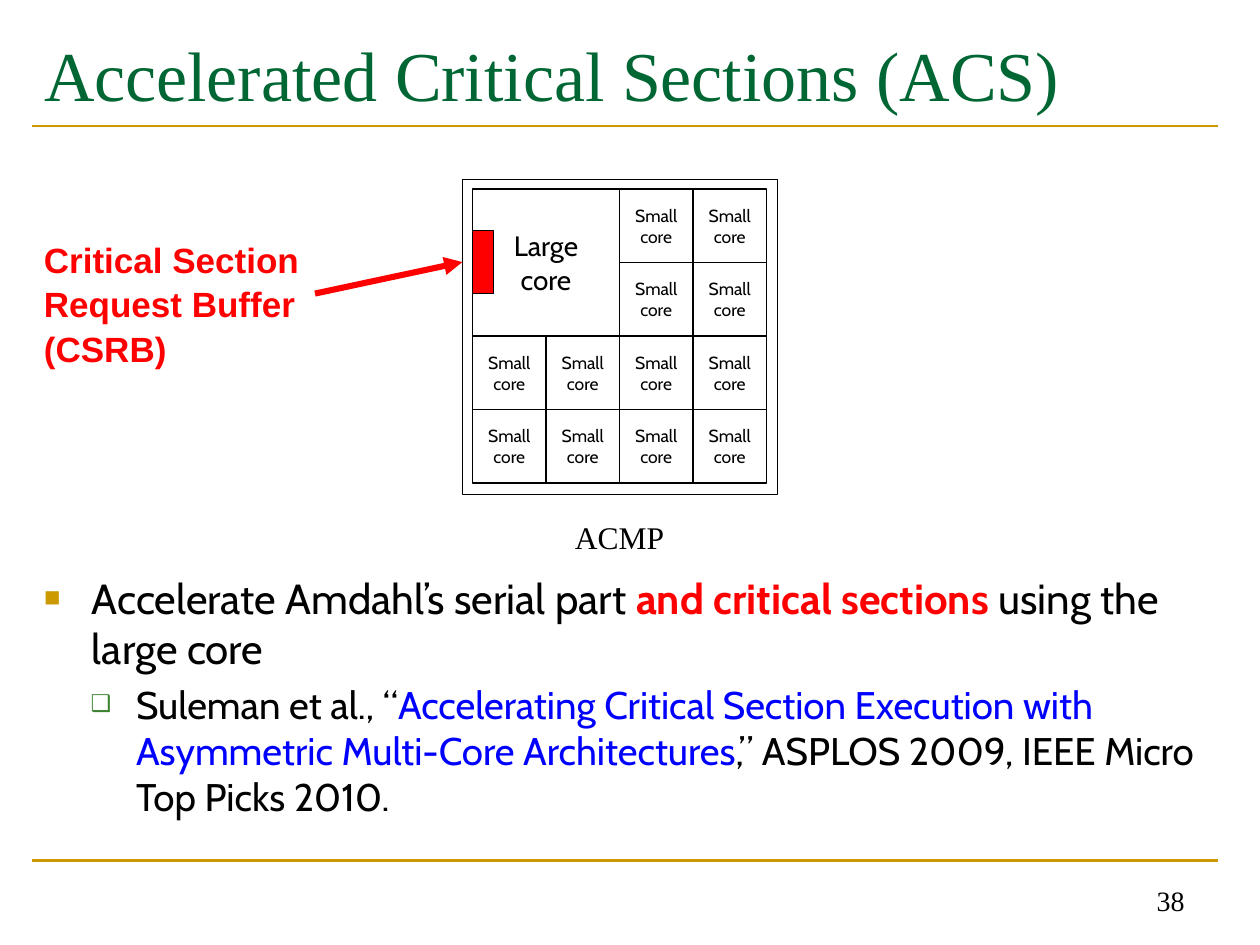
from dataclasses import dataclass
from itertools import product

from lxml import etree
from pptx import Presentation
from pptx.dml.color import RGBColor
from pptx.enum.shapes import MSO_CONNECTOR, MSO_SHAPE
from pptx.enum.text import MSO_ANCHOR, MSO_AUTO_SIZE, PP_ALIGN
from pptx.oxml.ns import qn
from pptx.util import Inches, Pt

LEFT, CENTER, RIGHT = PP_ALIGN.LEFT, PP_ALIGN.CENTER, PP_ALIGN.RIGHT
TOP, MIDDLE, BOTTOM = MSO_ANCHOR.TOP, MSO_ANCHOR.MIDDLE, MSO_ANCHOR.BOTTOM
NO_FIT = MSO_AUTO_SIZE.NONE
RECTANGLE = MSO_SHAPE.RECTANGLE
STRAIGHT = MSO_CONNECTOR.STRAIGHT


@dataclass(frozen=True)
class Theme:
    black: str = "000000"
    white: str = "FFFFFF"
    red: str = "FF0000"
    blue: str = "0000FF"
    green: str = "006633"
    leaf: str = "3B812F"
    gold: str = "CC9900"
    serif: str = "Times New Roman"
    sans: str = "Arial"
    body: str = "Cabin"
    title_size: int = 40
    point_size: int = 24
    citation_size: int = 22
    label_size: int = 20
    caption_size: int = 18
    large_size: int = 16
    small_size: int = 10


theme = Theme()


def write(frame, text, font=theme.body, size=theme.point_size, color=theme.black,
          bold=False, align=LEFT, anchor=TOP, wrap=True, line_spacing=None):
    frame.word_wrap = wrap
    frame.auto_size = NO_FIT
    frame.vertical_anchor = anchor
    paragraph = frame.paragraphs[-1]
    paragraph.alignment = align
    paragraph.line_spacing = line_spacing
    for number, line in enumerate(text.split("\n")):
        if number:
            paragraph.add_line_break()
        run = paragraph.add_run()
        run.text = line
        run.font.name = font
        run.font.size = Pt(size)
        run.font.bold = bold
        run.font.color.rgb = RGBColor.from_string(color)
    return paragraph


def box(parent, left, top, width, height, fill=None, line=None, weight=0.75):
    shape = parent.add_shape(RECTANGLE, Inches(left), Inches(top),
                             Inches(width), Inches(height))
    shape.shadow.inherit = False
    if fill:
        shape.fill.solid()
        shape.fill.fore_color.rgb = RGBColor.from_string(fill)
    else:
        shape.fill.background()
    if line:
        shape.line.color.rgb = RGBColor.from_string(line)
        shape.line.width = Pt(weight)
    else:
        shape.line.fill.background()
    return shape


deck = Presentation()
deck.slide_width, deck.slide_height = Inches(10), Inches(7.5)
slide = deck.slides.add_slide(deck.slide_layouts[1])
shapes = slide.shapes

title, points = slide.placeholders
title.left, title.top, title.width, title.height = map(Inches, (0.25, 0.17, 9.42, 0.83))
write(title.text_frame, "Accelerated Critical Sections (ACS)", font=theme.serif,
      size=theme.title_size, color=theme.green, anchor=MIDDLE)

points.left, points.top, points.width, points.height = map(Inches, (0.25, 4.49, 9.42, 2.34))
outline = [
    (0, 0.38, -0.38, "■", theme.gold, 65, theme.point_size, 0, [
        ("Accelerate Amdahl’s serial part ", theme.black, False),
        ("and critical sections ", theme.red, True),
        ("using the large core", theme.black, False)]),
    (1, 0.73, -0.36, "❑", theme.leaf, 60, theme.citation_size, 4.4, [
        ("Suleman et al., “", theme.black, False),
        ("Accelerating Critical Section Execution with Asymmetric Multi-Core Architectures",
         theme.blue, False),
        (",” ASPLOS 2009, IEEE Micro Top Picks 2010.", theme.black, False)]),
]
for level, margin, indent, mark, mark_color, mark_scale, size, gap, phrases in outline:
    if level:
        points.text_frame.add_paragraph()
    for text, color, bold in phrases:
        point = write(points.text_frame, text, size=size, color=color, bold=bold)
    point.level = level
    point.space_before = Pt(gap)
    properties = point._p.get_or_add_pPr()
    properties.set("marL", str(Inches(margin)))
    properties.set("indent", str(Inches(indent)))
    bullet_color = etree.SubElement(properties, qn("a:buClr"))
    etree.SubElement(bullet_color, qn("a:srgbClr"), val=mark_color)
    etree.SubElement(properties, qn("a:buSzPct"), val=str(mark_scale * 1000))
    etree.SubElement(properties, qn("a:buChar"), char=mark)

page = shapes.add_textbox(Inches(7.17), Inches(6.83), Inches(2.33), Inches(0.5))
write(page.text_frame, "38", font=theme.serif, size=theme.large_size,
      align=RIGHT, anchor=BOTTOM)

processor = shapes.add_group_shape().shapes
box(processor, 3.67, 1.42, 2.5, 2.5, line=theme.black, weight=0.25)
grid_left, grid_top, pitch = 3.75, 1.5, 7 / 12
cores = [("Small\ncore", row, column, 1, theme.small_size)
         for row, column in product(range(4), repeat=2) if row > 1 or column > 1]
cores.append(("Large\ncore", 0, 0, 2, theme.large_size))
for name, row, column, span, size in cores:
    core = box(processor, grid_left + column * pitch, grid_top + row * pitch,
               span * pitch, span * pitch, line=theme.black)
    write(core.text_frame, name, size=size, align=CENTER, anchor=MIDDLE, wrap=False)
caption = box(processor, grid_left, 4.06, 4 * pitch, 0.4, fill=theme.white)
write(caption.text_frame, "ACMP", font=theme.serif, size=theme.caption_size,
      align=CENTER, anchor=MIDDLE)

buffer_label = shapes.add_textbox(Inches(0.25), Inches(1.83), Inches(2.58), Inches(1.11))
write(buffer_label.text_frame, "Critical Section\nRequest Buffer (CSRB)", font=theme.sans,
      size=theme.label_size, color=theme.red, bold=True, line_spacing=1.05)
box(shapes, grid_left, 1.83, 0.17, 0.5, fill=theme.red, line=theme.black)

strokes = [
    (0.25, 1, 9.67, 1, theme.gold, 1.5, False),
    (0.25, 6.83, 9.67, 6.83, theme.gold, 1.5, False),
    (2.5, 2.33, 3.67, 2.08, theme.red, 3.5, True),
]
for x1, y1, x2, y2, color, weight, arrow in strokes:
    stroke = shapes.add_connector(STRAIGHT, Inches(x1), Inches(y1), Inches(x2), Inches(y2))
    stroke.line.color.rgb = RGBColor.from_string(color)
    stroke.line.width = Pt(weight)
    if arrow:
        etree.SubElement(stroke.line._get_or_add_ln(), qn("a:tailEnd"), type="triangle")
    etree.SubElement(stroke._element.spPr, qn("a:effectLst"))

deck.save("out.pptx")
